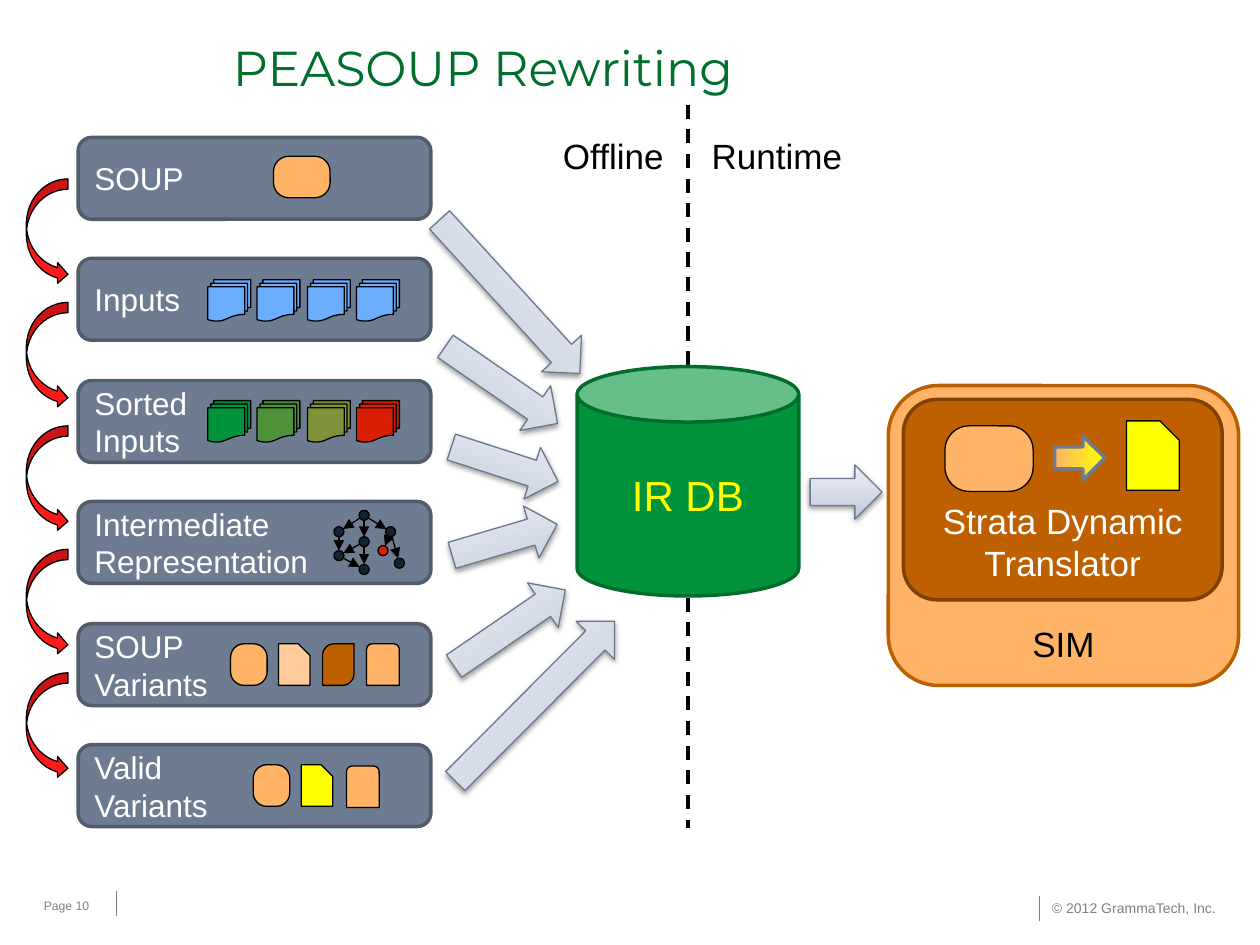
from dataclasses import dataclass
from math import hypot

from lxml import etree
from pptx import Presentation
from pptx.dml.color import RGBColor
from pptx.enum.dml import MSO_LINE
from pptx.enum.shapes import MSO_CONNECTOR, MSO_SHAPE
from pptx.enum.text import MSO_ANCHOR, MSO_AUTO_SIZE, PP_ALIGN
from pptx.oxml import parse_xml
from pptx.oxml.ns import nsdecls, qn
from pptx.util import Pt

PX = 9144  # EMU per px, 100 px to the inch
ROUND, SNIP = MSO_SHAPE.ROUNDED_RECTANGLE, MSO_SHAPE.SNIP_1_RECTANGLE
DIAGONAL, TAB_TOP = MSO_SHAPE.ROUND_2_DIAG_RECTANGLE, MSO_SHAPE.ROUND_2_SAME_RECTANGLE
DOCUMENTS, CAN, OVAL = MSO_SHAPE.FLOWCHART_MULTIDOCUMENT, MSO_SHAPE.CAN, MSO_SHAPE.OVAL
ARROW, CURVED = MSO_SHAPE.RIGHT_ARROW, MSO_SHAPE.CURVED_LEFT_ARROW
STRAIGHT, DASH = MSO_CONNECTOR.STRAIGHT, MSO_LINE.DASH
TOP, MIDDLE, BOTTOM = MSO_ANCHOR.TOP, MSO_ANCHOR.MIDDLE, MSO_ANCHOR.BOTTOM
LEFT, CENTER = PP_ALIGN.LEFT, PP_ALIGN.CENTER
GROW = MSO_AUTO_SIZE.SHAPE_TO_FIT_TEXT

COLORS = {
    "black": "000000", "white": "FFFFFF", "gray": "808080", "title": "006E2C",
    "slate": "6E7C92", "slate_edge": "515C6C", "arrow_edge": "6B7990",
    "orange": "FFB366", "peach": "FFCC99", "brown": "BF6000",
    "sim_edge": "BD5F00", "brown_edge": "804000", "yellow": "FFFF00",
    "blue": "6BAEFF", "green": "00933B", "green_edge": "006D2C",
    "leaf": "4E933B", "olive": "80933B", "red": "D81E05",
    "bright_red": "FF1A1A", "node": "11242F",
}
STEEL = [(0, "BEC9DC"), (35, "D1D8E5"), (100, "EDF0F6")]
SUNNY = [(0, COLORS["orange"]), (100, COLORS["yellow"])]


@dataclass
class Box:
    left: int
    top: int
    width: int
    height: int


@dataclass
class Icon:
    kind: int
    box: Box
    fill: str
    adjust: tuple = ()


@dataclass
class Flow:
    box: Box
    angle: float = 0


@dataclass
class Node:
    x: int
    y: int
    fill: str = "node"


def rgb(name: str) -> RGBColor:
    return RGBColor.from_string(COLORS[name])


def emu(box: Box) -> list:
    return [value * PX for value in (box.left, box.top, box.width, box.height)]


def add_block(page, kind, box: Box, fill, edge="black", weight=0.75, adjust=()):
    """Preset shape; fill is a colour name, or None when a gradient follows."""
    shape = page.shapes.add_shape(kind, *emu(box))
    shape.shadow.inherit = False
    if fill:
        shape.fill.solid()
        shape.fill.fore_color.rgb = rgb(fill)
    shape.line.color.rgb = rgb(edge)
    shape.line.width = Pt(weight)
    for index, value in enumerate(adjust):
        shape.adjustments[index] = value
    return shape


def add_gradient(shape, stops: list, angle: int) -> None:
    marks = "".join(f'<a:gs pos="{pos * 1000}"><a:srgbClr val="{color}"/></a:gs>'
                    for pos, color in stops)
    gradient = parse_xml(f'<a:gradFill {nsdecls("a")} rotWithShape="1"><a:gsLst>{marks}'
                         f'</a:gsLst><a:lin ang="{angle * 60000}" scaled="0"/></a:gradFill>')
    shape.element.spPr.find(qn("a:prstGeom")).addnext(gradient)


def add_flow(page, flow: Flow) -> None:
    arrow = add_block(page, ARROW, flow.box, None, "arrow_edge")
    arrow.rotation = flow.angle
    add_gradient(arrow, STEEL, 270)
    arrow.element.spPr.find(qn("a:effectLst")).append(parse_xml(
        f'<a:outerShdw {nsdecls("a")} blurRad="40000" dist="20000" dir="5400000" '
        'rotWithShape="0"><a:srgbClr val="000000"><a:alpha val="38000"/></a:srgbClr>'
        '</a:outerShdw>'))


def add_line(page, start: tuple, end: tuple, color="black", weight=0.75, arrow=False):
    line = page.shapes.add_connector(STRAIGHT, *[round(v * PX) for v in (*start, *end)])
    line.line.color.rgb = rgb(color)
    line.line.width = Pt(weight)
    if arrow:
        etree.SubElement(line.line._get_or_add_ln(), qn("a:tailEnd"), type="triangle")
    etree.SubElement(line.element.spPr, qn("a:effectLst"))
    return line


def write(shape, lines: list, size, color, align=LEFT, anchor=MIDDLE, font="Arial"):
    frame = shape.text_frame
    frame.word_wrap = True
    frame.vertical_anchor = anchor
    for index, text in enumerate(lines):
        para = frame.add_paragraph() if index else frame.paragraphs[0]
        para.alignment = align
        span = para.add_run()
        span.text = text
        span.font.size = Pt(size)
        span.font.name = font
        span.font.color.rgb = rgb(color)
    return frame


def add_label(page, box: Box, text: str, size, color, anchor=TOP, font="Arial"):
    return write(page.shapes.add_textbox(*emu(box)), [text], size, color, LEFT, anchor, font)


def add_edge(page, source: Node, target: Node, radius: int = 4) -> None:
    """Arrow from rim to rim of two nodes."""
    dx, dy = target.x - source.x, target.y - source.y
    step = radius / hypot(dx, dy)
    add_line(page, (source.x + dx * step, source.y + dy * step),
             (target.x - dx * step, target.y - dy * step), arrow=True)


CARDS = [["SOUP"], ["Inputs"], ["Sorted", "Inputs"], ["Intermediate", "Representation"],
         ["SOUP", "Variants"], ["Valid", "Variants"]]
DOCUMENT_ROWS = {222: ["blue"] * 4, 318: ["green", "leaf", "olive", "red"]}
ICONS = [Icon(DOCUMENTS, Box(round(165 + 39.3 * column), top, 34, 33), fill)
         for top, fills in DOCUMENT_ROWS.items() for column, fill in enumerate(fills)]
ICONS += [
    Icon(ROUND, Box(217, 124, 45, 33), "orange", (0.37,)),
    Icon(ROUND, Box(183, 511, 29, 33), "orange", (0.37,)),
    Icon(SNIP, Box(221, 511, 25, 33), "peach", (0.37,)),
    Icon(DIAGONAL, Box(256, 511, 25, 33), "brown", (0.37, 0)),
    Icon(TAB_TOP, Box(291, 511, 26, 33), "orange"),
    Icon(ROUND, Box(201, 607, 29, 33), "orange", (0.37,)),
    Icon(SNIP, Box(239, 607, 25, 33), "yellow", (0.37,)),
    Icon(TAB_TOP, Box(275, 608, 26, 33), "orange"),
    Icon(ROUND, Box(750, 338, 70, 52), "orange", (0.37,)),
    Icon(SNIP, Box(894, 334, 42, 55), "yellow", (0.37,)),
]
FLOWS = [
    Flow(Box(643, 369, 57, 43)), Flow(Box(322, 214, 165, 43), 47.6),
    Flow(Box(344, 284, 108, 43), 34.5), Flow(Box(356, 347, 89, 43), 17.9),
    Flow(Box(357, 407, 87, 43), 343.6), Flow(Box(351, 477, 107, 43), 325.6),
    Flow(Box(335, 535, 179, 43), 314.9),
]
NODES = {
    "root": Node(289, 409), "left": Node(269, 422), "middle": Node(289, 430),
    "low_left": Node(269, 441), "bottom": Node(289, 452), "right": Node(310, 422),
    "far": Node(317, 447), "marked": Node(304, 437, "red"),
}
EDGES = [("root", "left"), ("root", "middle"), ("root", "right"), ("left", "low_left"),
         ("middle", "low_left"), ("middle", "bottom"), ("low_left", "bottom"),
         ("right", "marked"), ("right", "far")]


def main() -> None:
    deck = Presentation()
    deck.slide_width, deck.slide_height = 1000 * PX, 750 * PX
    page = deck.slides.add_slide(deck.slide_layouts[6])

    # Footer and title
    add_line(page, (825, 711), (825, 731), "gray", 0.25)
    add_line(page, (92, 707), (92, 727), "gray", 0.25)
    notice = add_label(page, Box(825, 709, 153, 24), "© 2012 GrammaTech, Inc.", 8, "gray")
    notice.word_wrap, notice.auto_size = False, GROW
    add_label(page, Box(25, 702, 67, 33), "Page 10", 7, "gray", MIDDLE)
    add_label(page, Box(175, 25, 800, 92), "PEASOUP Rewriting", 28, "title", font="Montserrat")

    # Offline and runtime halves
    add_line(page, (546, 83), (546, 657), weight=2).line.dash_style = DASH
    halves = add_label(page, Box(437, 102, 250, 44), "Offline\tRuntime", 20, "black")
    stops = etree.SubElement(halves.paragraphs[0]._p.get_or_add_pPr(), qn("a:tabLst"))
    etree.SubElement(stops, qn("a:tab"), pos=str(118 * PX), algn="l")

    # Runtime side
    sim = add_block(page, ROUND, Box(705, 306, 278, 238), "orange", "sim_edge", 2)
    write(sim, ["SIM"], 20, "black", CENTER, BOTTOM)
    strata = add_block(page, ROUND, Box(717, 317, 253, 159), "brown", "brown_edge", 2)
    write(strata, ["Strata Dynamic", "Translator"], 20, "white", CENTER, BOTTOM)
    change = add_block(page, ARROW, Box(837, 346, 40, 35), None, "slate", 2)
    add_gradient(change, SUNNY, 0)

    # Offline steps, with a curved arrow between neighbours
    for row, lines in enumerate(CARDS):
        box = Box(62, round(109 + 96.4 * row), 280, 65)
        write(add_block(page, ROUND, box, "slate", "slate_edge", 2), lines, 18, "white")
    for row in range(len(CARDS) - 1):
        turn = add_block(page, CURVED, Box(21, 142 + 98 * row, 33, 84), "bright_red")
        turn.element.spPr.find(qn("a:xfrm")).set("flipH", "1")
    for icon in ICONS:
        add_block(page, icon.kind, icon.box, icon.fill, adjust=icon.adjust)

    # Graph of the intermediate representation
    for node in NODES.values():
        add_block(page, OVAL, Box(node.x - 4, node.y - 4, 8, 8), node.fill)
    for source, target in EDGES:
        add_edge(page, NODES[source], NODES[target])

    # Database and the arrows around it
    database = add_block(page, CAN, Box(458, 291, 176, 182), "green", "green_edge", 2)
    write(database, ["IR DB"], 24, "yellow", CENTER)
    for flow in FLOWS:
        add_flow(page, flow)

    deck.save("out.pptx")


if __name__ == "__main__":
    main()
